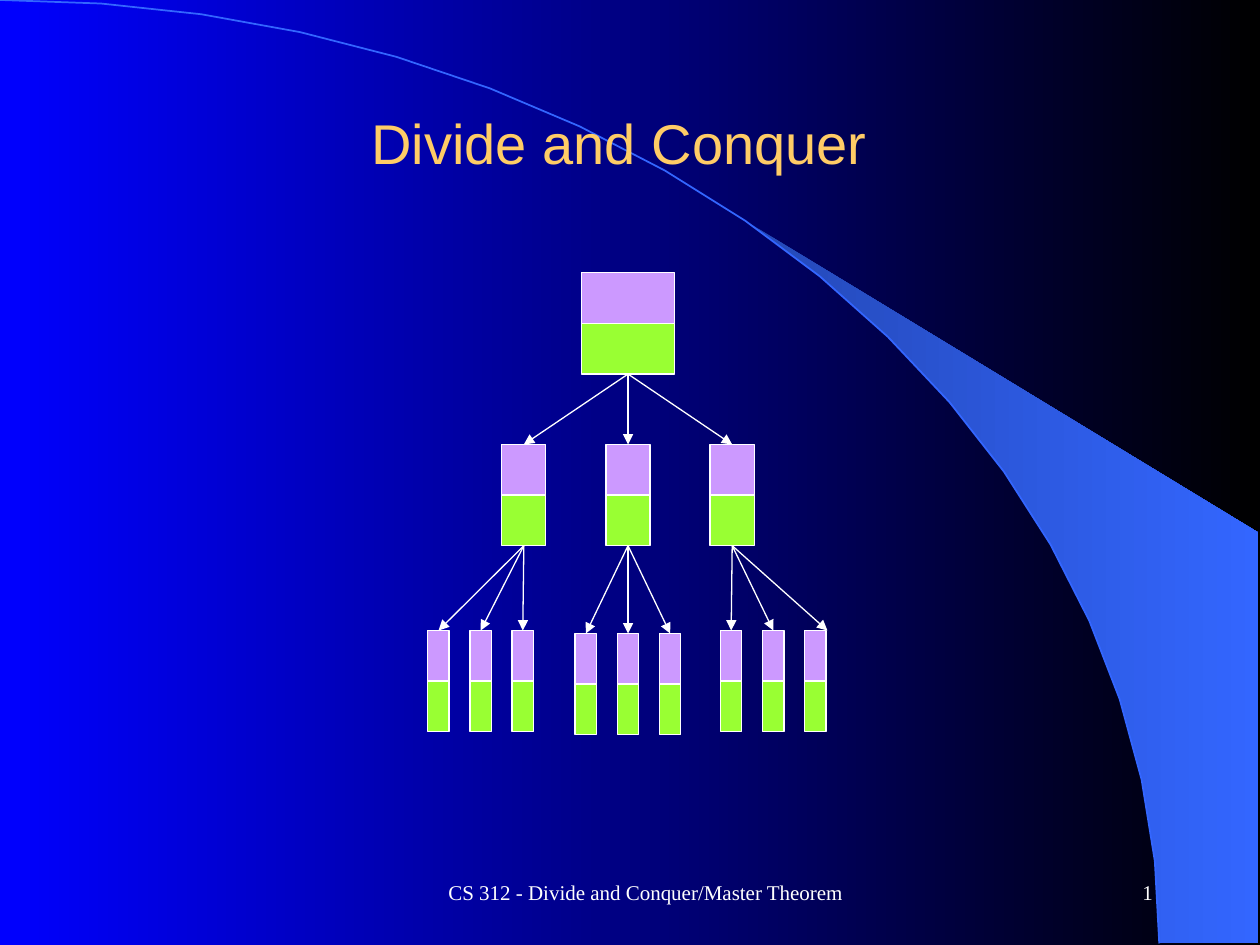
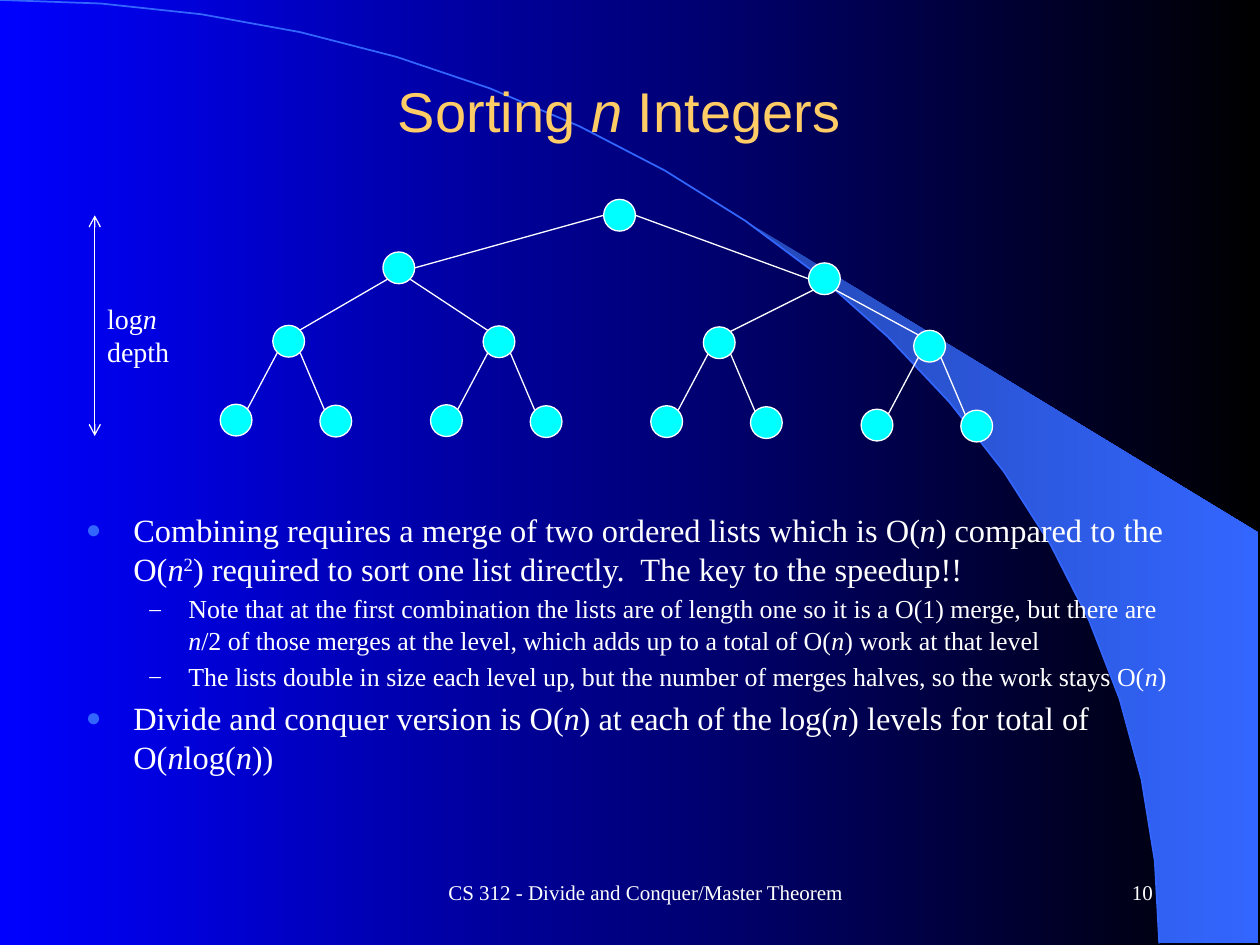
from dataclasses import dataclass
from math import cos, radians, sin

from lxml.etree import SubElement as Sub
from pptx import Presentation as Deck
from pptx.dml.color import RGBColor as Rgb
from pptx.enum.shapes import MSO_CONNECTOR as Conn, MSO_SHAPE as Kind
from pptx.enum.text import MSO_ANCHOR as Anchor, PP_ALIGN as Align
from pptx.oxml.ns import qn
from pptx.util import Cm, Pt


@dataclass(frozen=True)
class Theme:
    blue: str = "0000FF"
    black: str = "000000"
    sky: str = "3366FF"
    gold: str = "FFCC66"
    white: str = "FFFFFF"
    plum: str = "CC99FF"
    lime: str = "99FF33"
    aqua: str = "00FFFF"
    sans: str = "Arial"
    serif: str = "Times New Roman"
    head: float = 32
    main: float = 18.5
    sub: float = 14.8
    note: float = 16
    foot: float = 12
    thin: float = 0.75


look = Theme()


def write(page, box, paras, font=look.serif, tint=look.white,
          align=Align.LEFT, anchor=Anchor.TOP, wrap=True):
    """Add a text box; each paragraph is (size, runs), each run (text, style)."""
    frame = page.shapes.add_textbox(*map(Cm, box)).text_frame
    frame.word_wrap = wrap
    frame.vertical_anchor = anchor
    for num, (size, runs) in enumerate(paras):
        para = frame.add_paragraph() if num else frame.paragraphs[0]
        para.alignment = align
        for text, style in runs:
            run = para.add_run()
            run.text = text
            run.font.name = font
            run.font.size = Pt(size)
            run.font.italic = style == "i"
            run.font.color.rgb = Rgb.from_string(tint)
            if style == "up":
                run._r.get_or_add_rPr().set("baseline", "30000")
    return frame.paragraphs


def put(page, kind, x, y, wide, high, tint):
    """Add a filled shape with a thin white outline, centred on x."""
    shape = page.shapes.add_shape(kind, Cm(x - wide / 2), Cm(y), Cm(wide), Cm(high))
    shape.shadow.inherit = False
    shape.fill.solid()
    shape.fill.fore_color.rgb = Rgb.from_string(tint)
    shape.line.color.rgb = Rgb.from_string(look.white)
    shape.line.width = Pt(look.thin)
    return shape


deck = Deck()
deck.slide_width, deck.slide_height = Cm(25.4), Cm(19.05)
blank = deck.slide_layouts[6]

# Shared backdrop: one gradient, a quarter ellipse and the wing beside it
back = deck.slide_master.background.fill
arc = [(Cm(23.37 * sin(radians(a))), Cm(19.02 * (1 - cos(radians(a)))))
       for a in range(0, 91, 5)]
wing = arc[8:] + [(Cm(25.37), Cm(19.02)), (Cm(25.37), Cm(10.74))]

# Shared frame: title, footer and number
heads = [
    (1.7, [("Divide and Conquer", "")], "1"),
    (1.06, [("Sorting ", ""), ("n", "i"), (" Integers", "")], "10"),
]
pages = []
fades = [(back, look.blue, look.black, None)]
for top, title, num in heads:
    page = deck.slides.add_slide(blank)
    pages.append(page)
    for dots, shut in ((wing, True), (arc, False)):
        pen = page.shapes.build_freeform(*dots[0])
        pen.add_line_segments(dots[1:], close=shut)
        form = pen.convert_to_shape()
        form.shadow.inherit = False
        if shut:
            form.line.fill.background()
            fades.append((form.fill, look.sky, look.sky, "46275"))
        else:
            form.fill.background()
            form.line.color.rgb = Rgb.from_string(look.sky)
            form.line.width = Pt(1)
    write(page, (1.69, top, 21.59, 2.34), [(look.head, title)],
          look.sans, look.gold, Align.CENTER, Anchor.MIDDLE)
    write(page, (8.04, 17.35, 9.96, 1.27),
          [(look.foot, [("CS 312 - Divide and Conquer/Master Theorem", "")])],
          align=Align.CENTER, anchor=Anchor.MIDDLE)
    write(page, (18.21, 17.35, 5.28, 1.27), [(look.foot, [(num, "")])],
          align=Align.RIGHT, anchor=Anchor.MIDDLE)

for fill, left, right, shade in fades:
    fill.gradient()
    fill.gradient_angle = 0
    stops = fill.gradient_stops
    for stop, tint in zip(stops, (left, right)):
        stop.color.rgb = Rgb.from_string(tint)
    if shade:
        Sub(stops[0]._gs[0], qn("a:shade")).set("val", shade)

split, sort = pages
links = []  # page, start, end, head, tail, joined shapes

# Slide 1: tree of three-way splits, node i hangs under node (i - 1) // 3
mid, cell = 12.66, 1.02
nodes = [(mid, 5.5, 1.88)]
nodes += [(mid + step * 2.1, 8.96, 0.89) for step in (-1, 0, 1)]
nodes += [(hub + step * 0.85, top, 0.43)
          for hub, top in ((9.69, 12.71), (mid, 12.77), (15.59, 12.71))
          for step in (-1, 0, 1)]
lows = []
for i, (x, y, wide) in enumerate(nodes):
    high = put(split, Kind.RECTANGLE, x, y, wide, cell, look.plum)
    lows.append(put(split, Kind.RECTANGLE, x, y + cell, wide, cell, look.lime))
    if i:
        up = (i - 1) // 3
        root = nodes[up]
        last = i == len(nodes) - 1  # its arrow lands right of the middle
        links.append((split, (root[0], root[1] + 2 * cell),
                      (x + 0.24 if last else x, y), None, "triangle",
                      (lows[up], None if last else high)))

# Slide 2: binary tree, node i hangs under node (i - 1) // 2
size = 0.64
rad, diag = size / 2, 0.23
spots = [(12.49, 4.34), (8.04, 5.4), (16.62, 5.62),
         (5.82, 6.88), (10.06, 6.89), (14.5, 6.91), (18.74, 6.98)]
spots += [(x + dx, y + dy) for x, y in spots[3:]
          for dx, dy in ((-1.06, 1.59), (0.95, 1.61))]
for i, (x, y) in enumerate(spots):
    put(sort, Kind.OVAL, x, y - rad, size, size, look.aqua)
    if i:
        px, py = spots[(i - 1) // 2]
        side = -1 if i % 2 else 1
        dx, dy = (side * rad, 0) if i < 3 else (side * diag, diag)
        links.append((sort, (px + dx, py + dy), (x - dx, y - dy), None, None, None))

# Slide 2: depth mark
links.append((sort, (1.91, 4.34), (1.91, 8.79), "arrow", "arrow", None))
write(sort, (1.91, 5.95, 1.78, 1.63),
      [(look.note, [("log", ""), ("n", "i")]), (look.note, [("depth", "")])],
      wrap=False)

# Slide 2: bullets
notes = [
    (look.main, [
        ("Combining requires a merge of two ordered lists which is O(", ""), ("n", "i"),
        (") compared to the O(", ""), ("n", "i"), ("2", "up"),
        (") required to sort one list directly.  The key to the speedup!!", "")]),
    (look.sub, [
        ("Note that at the first combination the lists are of length one so it is "
         "a O(1) merge, but there are ", ""), ("n", "i"),
        ("/2 of those merges at the level, which adds up to a total of O(", ""),
        ("n", "i"), (") work at that level", "")]),
    (look.sub, [
        ("The lists double in size each level up, but the number of merges halves, "
         "so the work stays O(", ""), ("n", "i"), (")", "")]),
    (look.main, [
        ("Divide and conquer version is O(", ""), ("n", "i"),
        (") at each of the log(", ""), ("n", "i"), (") levels for total of O(", ""),
        ("n", "i"), ("log(", ""), ("n", "i"), ("))", "")]),
]
marks = {look.main: (0, 0.96, 0.96, "●", look.sky, 80),
         look.sub: (1, 2.07, 0.79, "–", look.white, 90)}
paras = write(sort, (1.48, 10.16, 22.63, 6.78), notes)
for para, (pts, runs) in zip(paras, notes):
    level, left, hang, sign, tint, pct = marks[pts]
    para.level = level
    para.space_before = Pt(pts * 0.2)
    prop = para._p.get_or_add_pPr()
    prop.set("marL", str(Cm(left)))
    prop.set("indent", str(-Cm(hang)))
    Sub(Sub(prop, qn("a:buClr")), qn("a:srgbClr")).set("val", tint)
    Sub(prop, qn("a:buSzPct")).set("val", str(pct * 1000))
    Sub(prop, qn("a:buFont")).set("typeface", look.serif)
    Sub(prop, qn("a:buChar")).set("char", sign)

# Lines and arrows of both slides
for page, start, end, head, tail, join in links:
    line = page.shapes.add_connector(Conn.STRAIGHT, *map(Cm, start + end))
    line.line.color.rgb = Rgb.from_string(look.white)
    line.line.width = Pt(look.thin)
    if join:
        line.begin_connect(join[0], 2)
        if join[1]:
            line.end_connect(join[1], 0)
    edge = line.line._get_or_add_ln()
    for tag, tip in (("a:headEnd", head), ("a:tailEnd", tail)):
        if tip:
            Sub(edge, qn(tag)).set("type", tip)
    Sub(line._element.spPr, qn("a:effectLst"))

deck.save("out.pptx")
